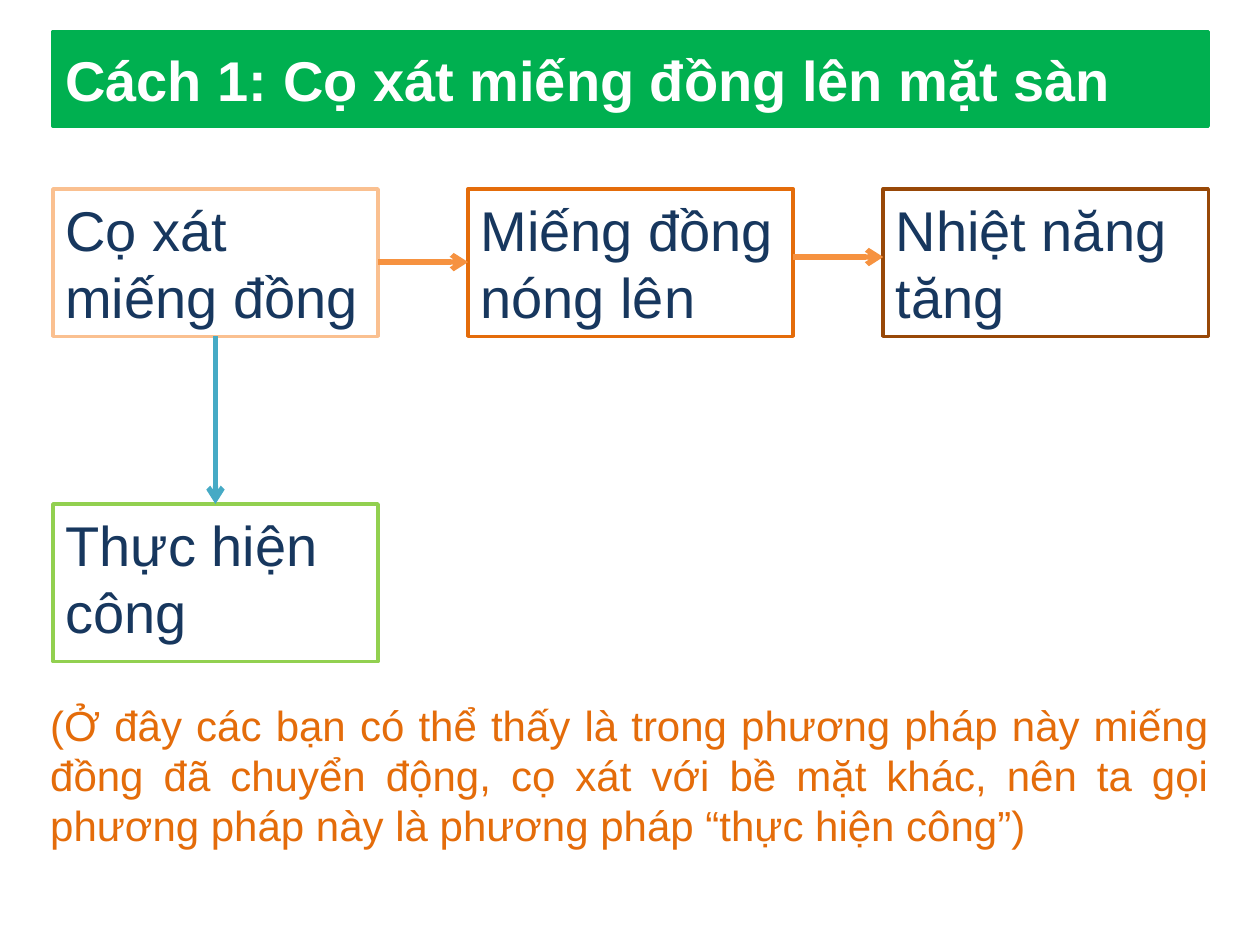
from lxml.etree import SubElement
from pptx import Presentation
from pptx.dml.color import RGBColor as RGB
from pptx.enum.shapes import MSO_CONNECTOR as Conn, MSO_SHAPE as Kind
from pptx.enum.text import MSO_ANCHOR as Anchor, PP_ALIGN as Align
from pptx.oxml.ns import qn
from pptx.util import Inches, Pt

THEME = {
    "font": "Arial", "white": "FFFFFF", "green": "00B050", "navy": "17375E",
    "peach": "FAC090", "orange": "E46C0A", "brown": "984807",
    "lime": "92D050", "amber": "F69240", "teal": "46AAC5",
    "big": 32, "small": 24, "edge": 2, "arrow": 3,
}

TITLE = "Cách 1: Cọ xát miếng đồng lên mặt sàn"
STEPS = [
    ("Cọ xát miếng đồng", "peach"),
    ("Miếng đồng nóng lên", "orange"),
    ("Nhiệt năng tăng", "brown"),
]
RESULT = ("Thực hiện công", "lime")
NOTE = (
    "(Ở đây các bạn có thể thấy là trong phương pháp này miếng đồng "
    "đã chuyển động, cọ xát với bề mặt khác, nên ta gọi phương pháp này "
    "là phương pháp “thực hiện công”)"
)

LEFT, WIDE = 0.42, 9.17
BOX_W, BOX_H, TOP = 2.58, 1.17, 1.5
PITCH = (WIDE - BOX_W) / (len(STEPS) - 1)
LOW, LOW_H = 4, 1.25
LINKS = [2.08, 2.04]


def color(name):
    return RGB.from_string(THEME[name])


def write(shape, text, size, ink, bold=False, align=Align.LEFT, anchor=Anchor.TOP):
    frame = shape.text_frame
    frame.word_wrap = True
    frame.vertical_anchor = anchor
    para = frame.paragraphs[0]
    para.alignment = align
    run = para.add_run()
    run.text = text
    font = run.font
    font.name, font.size, font.bold = THEME["font"], Pt(THEME[size]), bold
    font.color.rgb = color(ink)


def box(slide, left, top, width, height, edge, fill=None):
    shape = slide.shapes.add_shape(
        Kind.RECTANGLE, *map(Inches, (left, top, width, height)))
    shape.shadow.inherit = False
    if fill:
        shape.fill.solid()
        shape.fill.fore_color.rgb = color(fill)
    else:
        shape.fill.background()
    shape.line.color.rgb = color(edge)
    shape.line.width = Pt(THEME["edge"])
    return shape


def arrow(slide, start, end, ink):
    link = slide.shapes.add_connector(Conn.STRAIGHT, *map(Inches, start + end))
    link.line.color.rgb = color(ink)
    link.line.width = Pt(THEME["arrow"])
    SubElement(link.line._get_or_add_ln(), qn("a:tailEnd"), type="arrow")
    SubElement(link._element.spPr, qn("a:effectLst"))


def main():
    deck = Presentation()
    deck.slide_width, deck.slide_height = Inches(10), Inches(7.5)
    slide = deck.slides.add_slide(deck.slide_layouts[6])

    banner = box(slide, LEFT, 0.25, WIDE, 0.75, "green", "green")
    write(banner, TITLE, "big", "white", bold=True, anchor=Anchor.MIDDLE)

    spots = [(LEFT + i * PITCH, TOP, BOX_H, *step) for i, step in enumerate(STEPS)]
    spots.append((LEFT, LOW, LOW_H, *RESULT))
    for left, top, height, text, edge in spots:
        write(box(slide, left, top, BOX_W, height, edge), text, "big", "navy")

    for i, y in enumerate(LINKS):
        left = LEFT + i * PITCH
        arrow(slide, (left + BOX_W, y), (left + PITCH, y), "amber")
    mid = LEFT + BOX_W / 2
    arrow(slide, (mid, TOP + BOX_H), (mid, LOW), "teal")

    note = slide.shapes.add_textbox(*map(Inches, (0.3, 5.5, 9.39, 1.5)))
    write(note, NOTE, "small", "orange", align=Align.JUSTIFY)

    deck.save("out.pptx")


if __name__ == "__main__":
    main()
